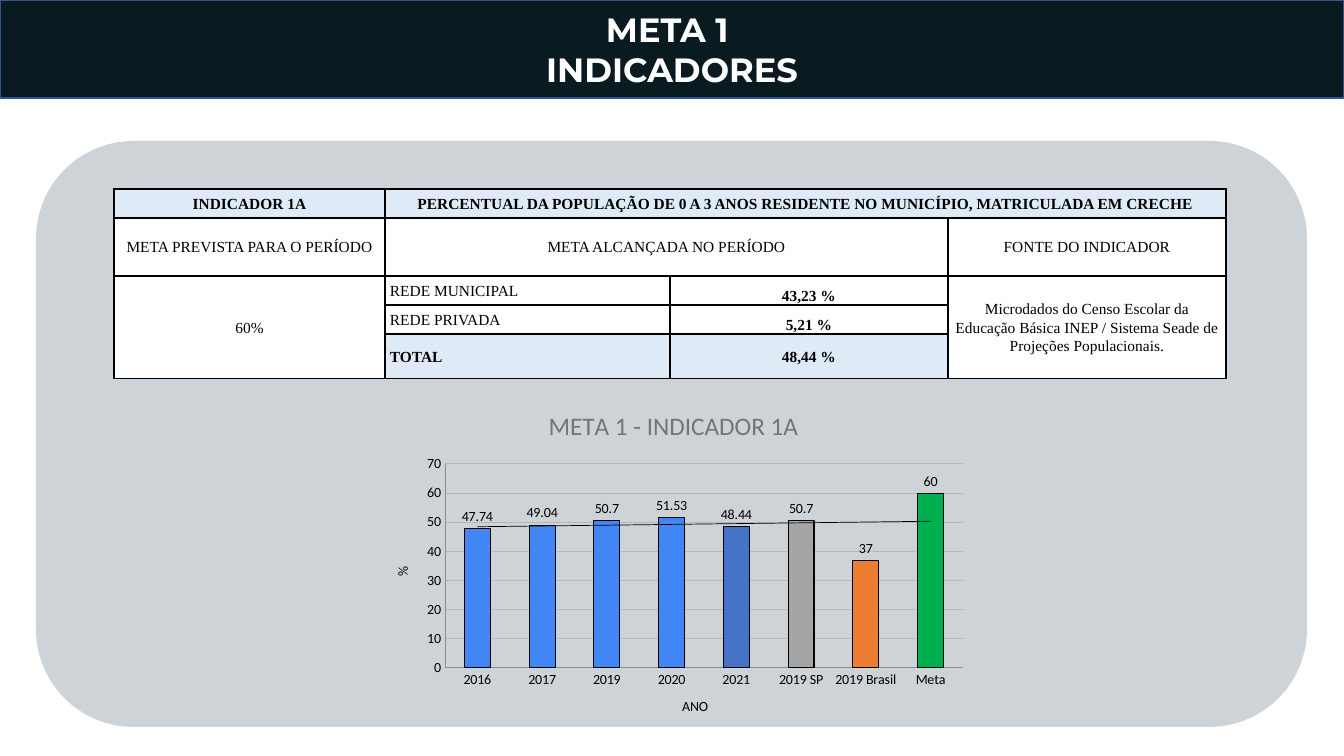
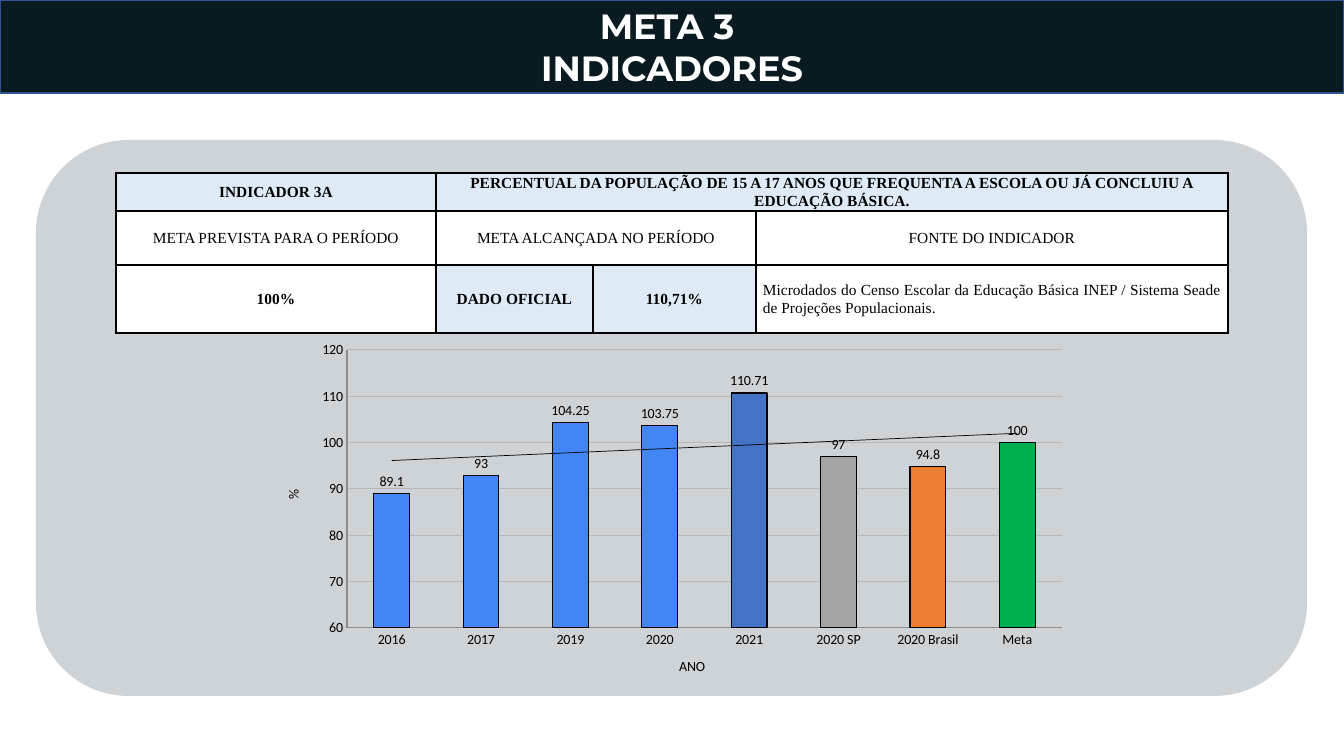
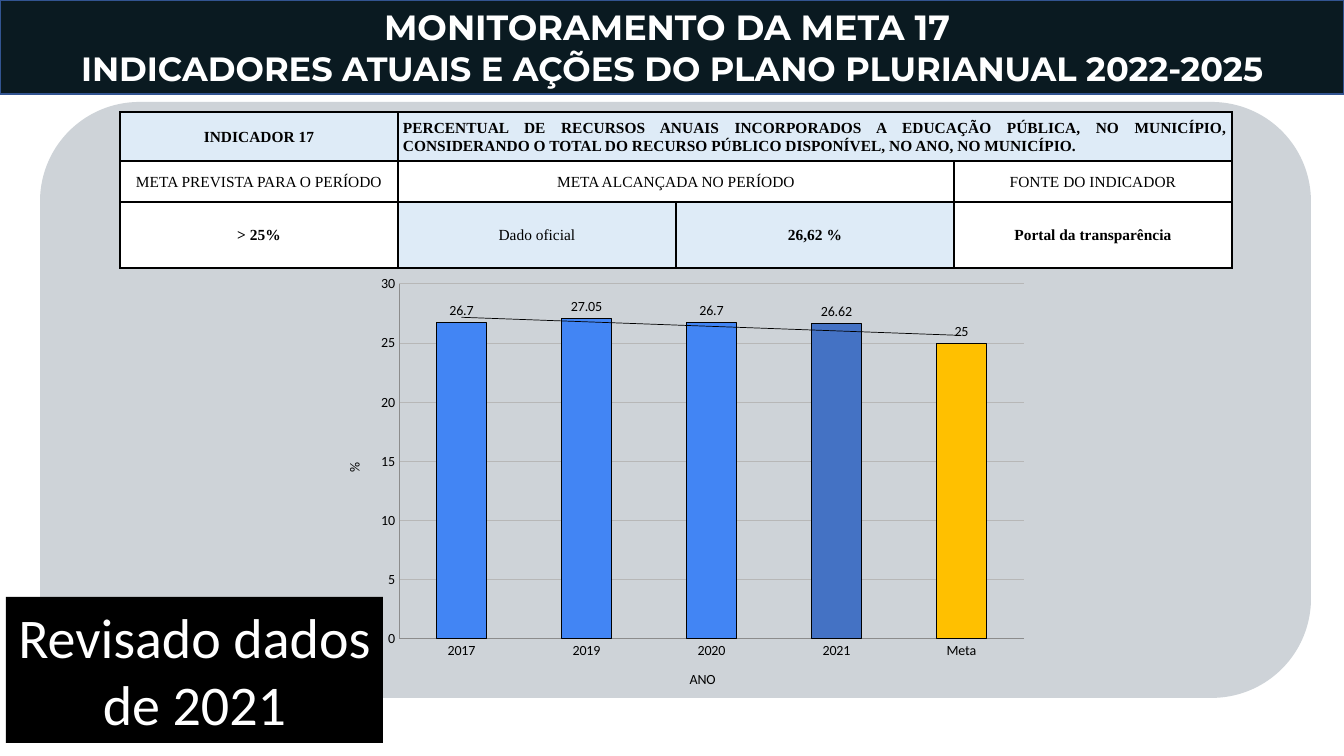
from dataclasses import dataclass
from typing import NamedTuple, Optional

from pptx import Presentation
from pptx.chart.data import CategoryChartData
from pptx.dml.color import RGBColor
from pptx.enum.chart import XL_CHART_TYPE, XL_LABEL_POSITION, XL_TICK_MARK
from pptx.enum.shapes import MSO_SHAPE
from pptx.enum.text import MSO_ANCHOR, MSO_AUTO_SIZE, PP_ALIGN
from pptx.oxml import parse_xml
from pptx.oxml.ns import nsdecls, qn
from pptx.util import Emu, Pt

PX = 914400 / 100.8
SLIDE_W, SLIDE_H = 1344, 756

COLORS = {
    "navy": "0A1A21", "outline": "325491", "panel": "CED3D8", "head": "DEEBF7",
    "white": "FFFFFF", "black": "000000", "grid": "B7B7B7", "axis": "8C8C8C",
    "title": "757575", "year": "4285F4", "latest": "4472C4", "state": "A5A5A5",
    "country": "ED7D31", "goal": "00B050", "amber": "FFC000",
}
CENTER, LEFT, JUSTIFY = PP_ALIGN.CENTER, PP_ALIGN.LEFT, PP_ALIGN.JUSTIFY


class Box(NamedTuple):
    x: int
    y: int
    w: int
    h: int


class Line(NamedTuple):
    text: str
    size: int


class Cell(NamedTuple):
    text: str
    bold: bool = False
    fill: str = "white"
    align: PP_ALIGN = CENTER
    anchor: MSO_ANCHOR = MSO_ANCHOR.MIDDLE
    rows: int = 1
    cols: int = 1


class Bar(NamedTuple):
    label: str
    value: float
    color: str = "year"


class Scale(NamedTuple):
    low: int
    high: int
    step: int


@dataclass
class Indicator:
    title: list[Line]
    band_h: int
    panel: Box
    table_at: tuple[int, int]
    cols: list[int]
    rows: list[int]
    inset: int
    heading: Cell
    summary: Cell
    body: list[list[Optional[Cell]]]
    chart: Box
    plot: Box
    scale: Scale
    bars: list[Bar]
    chart_title: str = ""
    stamp: str = ""


def px(n: float) -> Emu:
    return Emu(round(n * PX))


def rgb(name: str) -> RGBColor:
    return RGBColor.from_string(COLORS[name])


def set_font(font, name: str, size: int, color: str, bold: bool = False) -> None:
    font.name, font.size, font.bold = name, Pt(size), bold
    font.color.rgb = rgb(color)


def add_block(s, kind: MSO_SHAPE, box: Box, fill: str, line: str = ""):
    sp = s.shapes.add_shape(kind, *map(px, box))
    sp.shadow.inherit = False
    sp.fill.solid()
    sp.fill.fore_color.rgb = rgb(fill)
    if line:
        sp.line.color.rgb = rgb(line)
        sp.line.width = Pt(1)
    else:
        sp.line.fill.background()
    return sp


def write_lines(sp, lines: list[Line], font: str, bold: bool) -> None:
    tf = sp.text_frame
    tf.word_wrap = True
    tf.vertical_anchor = MSO_ANCHOR.MIDDLE
    for i, line in enumerate(lines):
        p = tf.add_paragraph() if i else tf.paragraphs[0]
        p.text, p.alignment = line.text, CENTER
        set_font(p.font, font, line.size, "white", bold)


def add_borders(cell) -> None:
    tc_pr = cell._tc.get_or_add_tcPr()
    for i, side in enumerate(("lnL", "lnR", "lnT", "lnB")):
        tc_pr.insert(i, parse_xml(
            f'<a:{side} {nsdecls("a")} w="12700"><a:solidFill>'
            f'<a:srgbClr val="{COLORS["black"]}"/></a:solidFill></a:{side}>'))


def add_indicator_table(s, ind: Indicator) -> None:
    captions = [Cell("META PREVISTA PARA O PERÍODO"),
                Cell("META ALCANÇADA NO PERÍODO", cols=2), None,
                Cell("FONTE DO INDICADOR")]
    grid = [[ind.heading, ind.summary, None, None], captions, *ind.body]
    box = Box(*ind.table_at, sum(ind.cols), sum(ind.rows))
    table = s.shapes.add_table(len(ind.rows), len(ind.cols), *map(px, box)).table
    for col, w in zip(table.columns, ind.cols):
        col.width = px(w)
    for row, h in zip(table.rows, ind.rows):
        row.height = px(h)
    for r, row in enumerate(grid):
        for c, item in enumerate(row):
            cell = table.cell(r, c)
            add_borders(cell)
            cell.margin_left = cell.margin_right = px(ind.inset)
            cell.margin_top = cell.margin_bottom = 0
            if item is None:
                continue
            if item.rows > 1 or item.cols > 1:
                cell.merge(table.cell(r + item.rows - 1, c + item.cols - 1))
            cell.fill.solid()
            cell.fill.fore_color.rgb = rgb(item.fill)
            cell.vertical_anchor = item.anchor
            p = cell.text_frame.paragraphs[0]
            p.text, p.alignment = item.text, item.align
            p.line_spacing, p.space_after = 1.07, Pt(8)
            set_font(p.font, "Times New Roman", 11, "black", item.bold)


def style_axis(axis, title: str) -> None:
    axis.major_tick_mark = axis.minor_tick_mark = XL_TICK_MARK.NONE
    axis.format.line.color.rgb = rgb("axis")
    tf = axis.axis_title.text_frame
    tf.text = title
    set_font(tf.paragraphs[0].font, "Calibri", 10, "black")


def add_indicator_chart(s, ind: Indicator) -> None:
    data = CategoryChartData()
    data.categories = [bar.label for bar in ind.bars]
    data.add_series("Series 1", [bar.value for bar in ind.bars])
    chart = s.shapes.add_chart(
        XL_CHART_TYPE.COLUMN_CLUSTERED, *map(px, ind.chart), data).chart
    set_font(chart.font, "Calibri", 10, "black")
    chart.has_legend = False
    chart.has_title = bool(ind.chart_title)
    if ind.chart_title:
        tf = chart.chart_title.text_frame
        tf.text = ind.chart_title
        set_font(tf.paragraphs[0].font, "Calibri", 18, "title")

    # Axes
    style_axis(chart.category_axis, "ANO")
    axis = chart.value_axis
    style_axis(axis, "%")
    axis.minimum_scale, axis.maximum_scale, axis.major_unit = ind.scale
    axis.major_gridlines.format.line.color.rgb = rgb("grid")
    axis.major_gridlines.format.line.width = Pt(0.75)

    # Columns and labels
    plot = chart.plots[0]
    plot.gap_width, plot.vary_by_categories = 150, False
    series = plot.series[0]
    series.invert_if_negative = False
    for i, bar in enumerate(ind.bars):
        fmt = series.points[i].format
        fmt.fill.solid()
        fmt.fill.fore_color.rgb = rgb(bar.color)
        fmt.line.color.rgb = rgb("black")
        fmt.line.width = Pt(0.75)
    labels = series.data_labels
    labels.show_value = True
    labels.position = XL_LABEL_POSITION.OUTSIDE_END
    set_font(labels.font, "Calibri", 10, "black")

    # Trend line, clear background and plot position
    root = chart.element
    root.find(".//" + qn("c:cat")).addprevious(parse_xml(
        f'<c:trendline {nsdecls("c", "a")}><c:spPr><a:ln w="6350"><a:solidFill>'
        f'<a:srgbClr val="{COLORS["black"]}"/></a:solidFill></a:ln></c:spPr>'
        '<c:trendlineType val="linear"/><c:dispRSqr val="0"/><c:dispEq val="0"/>'
        '</c:trendline>'))
    root.find(qn("c:chart")).addnext(parse_xml(
        f'<c:spPr {nsdecls("c", "a")}><a:noFill/><a:ln><a:noFill/></a:ln></c:spPr>'))
    area, inner = ind.chart, ind.plot
    parts = {"x": (inner.x - area.x) / area.w, "y": (inner.y - area.y) / area.h,
             "w": inner.w / area.w, "h": inner.h / area.h}
    modes = "".join(f'<c:{k}Mode val="edge"/>' for k in "xy")
    sizes = "".join(f'<c:{k} val="{v:.4f}"/>' for k, v in parts.items())
    plot_area = root.find(".//" + qn("c:plotArea"))
    for old in plot_area.findall(qn("c:layout")):
        plot_area.remove(old)
    plot_area.insert(0, parse_xml(
        f'<c:layout {nsdecls("c")}><c:manualLayout><c:layoutTarget val="inner"/>'
        f'{modes}{sizes}</c:manualLayout></c:layout>'))


def add_indicator_slide(prs, ind: Indicator) -> None:
    s = prs.slides.add_slide(prs.slide_layouts[6])
    band = add_block(s, MSO_SHAPE.RECTANGLE, Box(0, 0, SLIDE_W, ind.band_h),
                     "navy", "outline")
    write_lines(band, ind.title, "Montserrat", True)
    add_block(s, MSO_SHAPE.ROUNDED_RECTANGLE, ind.panel, "panel")
    add_indicator_table(s, ind)
    add_indicator_chart(s, ind)
    if ind.stamp:
        stamp = add_block(s, MSO_SHAPE.RECTANGLE, Box(6, 597, 377, 146), "black")
        write_lines(stamp, [Line(ind.stamp, 40)], "Calibri", False)
        stamp.text_frame.auto_size = MSO_AUTO_SIZE.SHAPE_TO_FIT_TEXT


def head(text: str, **options) -> Cell:
    return Cell(text, True, "head", **options)


def network(name: str, share: str) -> list[Cell]:
    return [Cell(name, align=LEFT), Cell(share, True, anchor=MSO_ANCHOR.BOTTOM)]


SOURCE = ("Microdados do Censo Escolar da Educação Básica INEP / "
          "Sistema Seade de Projeções Populacionais.")

INDICATORS = [
    Indicator(
        title=[Line("META 1 ", 24), Line("INDICADORES", 24)],
        band_h=98, panel=Box(36, 141, 1271, 586),
        table_at=(114, 189), cols=[271, 285, 278, 278],
        rows=[29, 58, 29, 29, 45], inset=5,
        heading=head("INDICADOR 1A"),
        summary=head("PERCENTUAL DA POPULAÇÃO DE 0 A 3 ANOS RESIDENTE NO "
                     "MUNICÍPIO, MATRICULADA EM CRECHE", cols=3),
        body=[
            [Cell("60%", rows=3), *network("REDE MUNICIPAL", "43,23 %"),
             Cell(SOURCE, rows=3)],
            [None, *network("REDE PRIVADA", "5,21 %"), None],
            [None, head("TOTAL", align=LEFT), head("48,44 %"), None],
        ],
        chart=Box(372, 392, 603, 344), plot=Box(445, 464, 518, 204),
        scale=Scale(0, 70, 10),
        bars=[Bar("2016", 47.74), Bar("2017", 49.04), Bar("2019", 50.7),
              Bar("2020", 51.53), Bar("2021", 48.44, "latest"),
              Bar("2019 SP", 50.7, "state"), Bar("2019 Brasil", 37, "country"),
              Bar("Meta", 60, "goal")],
        chart_title="META 1 - INDICADOR 1A",
    ),
    Indicator(
        title=[Line("META 3 ", 25), Line("INDICADORES", 25)],
        band_h=93, panel=Box(36, 140, 1271, 556),
        table_at=(116, 173), cols=[320, 157, 163, 472],
        rows=[38, 54, 68], inset=7,
        heading=head("INDICADOR 3A"),
        summary=head("PERCENTUAL DA POPULAÇÃO DE 15 A 17 ANOS QUE FREQUENTA A "
                     "ESCOLA OU JÁ CONCLUIU A EDUCAÇÃO BÁSICA.", cols=3),
        body=[[Cell("100%", True), head("DADO OFICIAL"), head("110,71%"),
               Cell(SOURCE, align=JUSTIFY)]],
        chart=Box(264, 336, 813, 361), plot=Box(347, 350, 715, 278),
        scale=Scale(60, 120, 10),
        bars=[Bar("2016", 89.1), Bar("2017", 93), Bar("2019", 104.25),
              Bar("2020", 103.75), Bar("2021", 110.71, "latest"),
              Bar("2020 SP", 97, "state"), Bar("2020 Brasil", 94.8, "country"),
              Bar("Meta", 100, "goal")],
    ),
    Indicator(
        title=[Line("MONITORAMENTO DA META 17 ", 25),
               Line("INDICADORES ATUAIS E AÇÕES DO PLANO PLURIANUAL 2022-2025", 24)],
        band_h=94, panel=Box(40, 102, 1271, 596),
        table_at=(120, 112), cols=[278] * 4, rows=[49, 41, 66], inset=5,
        heading=head("INDICADOR 17"),
        summary=head("PERCENTUAL DE RECURSOS ANUAIS INCORPORADOS A EDUCAÇÃO "
                     "PÚBLICA, NO MUNICÍPIO, CONSIDERANDO O TOTAL DO RECURSO "
                     "PÚBLICO DISPONÍVEL, NO ANO, NO MUNICÍPIO.",
                     align=JUSTIFY, cols=3),
        body=[[Cell("> 25%", True), Cell("Dado oficial", fill="head"),
               head("26,62 %"), Cell("Portal da transparência", True)]],
        chart=Box(326, 267, 713, 440), plot=Box(399, 284, 625, 355),
        scale=Scale(0, 30, 5),
        bars=[Bar("2017", 26.7), Bar("2019", 27.05), Bar("2020", 26.7),
              Bar("2021", 26.62, "latest"), Bar("Meta", 25, "amber")],
        stamp="Revisado dados de 2021",
    ),
]


def main() -> None:
    prs = Presentation()
    prs.slide_width, prs.slide_height = px(SLIDE_W), px(SLIDE_H)
    for ind in INDICATORS:
        add_indicator_slide(prs, ind)
    prs.save("out.pptx")


if __name__ == "__main__":
    main()
